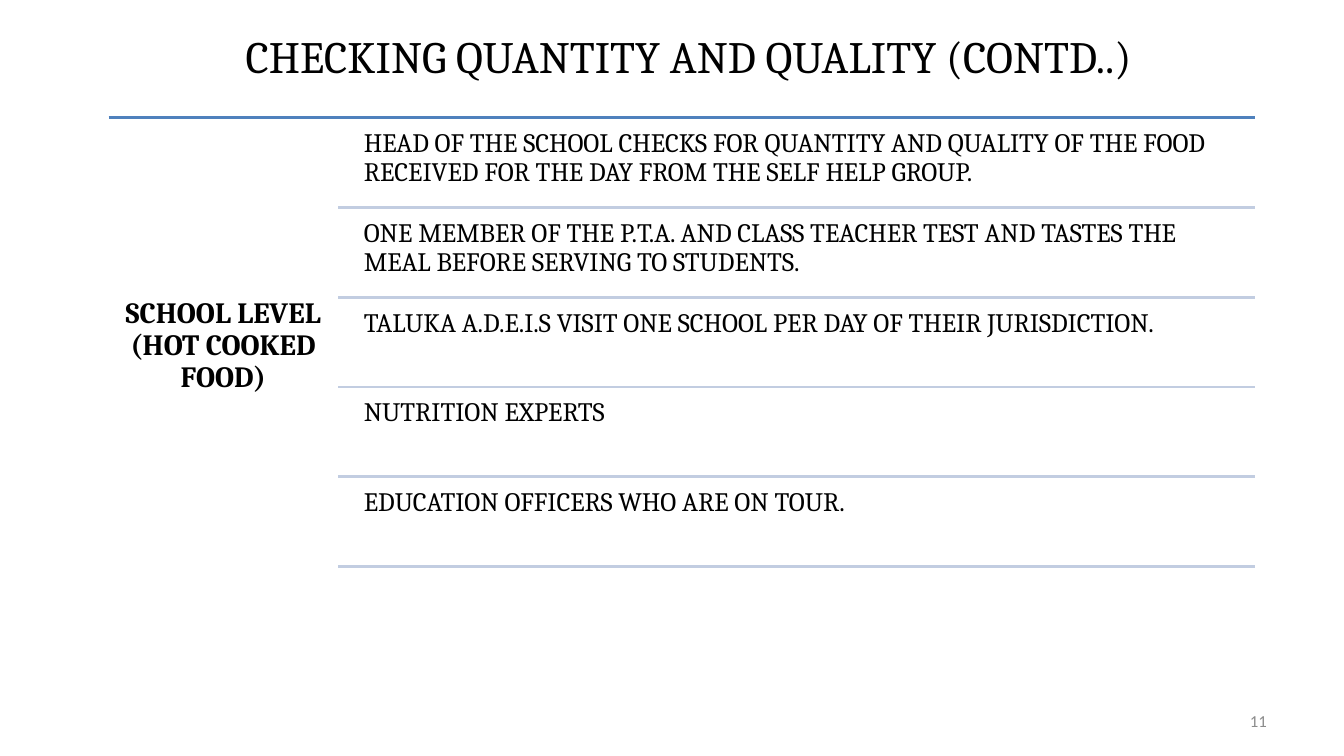
import pptx
import pptx.dml.color
import pptx.enum.shapes
import pptx.enum.text
import pptx.oxml.ns
import pptx.util
from lxml import etree
from pptx.util import Cm

ALIGN = pptx.enum.text.PP_ALIGN
MIDDLE = pptx.enum.text.MSO_ANCHOR.MIDDLE
CHECKS = [
    "HEAD OF THE SCHOOL CHECKS FOR QUANTITY AND QUALITY OF THE FOOD "
    "RECEIVED FOR THE DAY FROM THE SELF HELP GROUP.",
    "ONE MEMBER OF THE P.T.A. AND CLASS TEACHER TEST AND TASTES THE "
    "MEAL BEFORE SERVING TO STUDENTS.",
    "TALUKA A.D.E.I.S VISIT ONE SCHOOL PER DAY OF THEIR JURISDICTION.",
    "NUTRITION EXPERTS",
    "EDUCATION OFFICERS WHO ARE ON TOUR.",
]
LIST_TOP = 2.97
ROW_PITCH = 2.26
RIGHT = 31.62


def color(value):
    return pptx.dml.color.RGBColor.from_string(value)


def write(shape, text, size, align, font="Cambria", fill="000000", bold=False):
    para = shape.text_frame.paragraphs[0]
    para.text = text
    para.alignment = align
    para.font.size = pptx.util.Pt(size)
    para.font.name = font
    para.font.bold = bold
    para.font.color.rgb = color(fill)
    return para


def add_text(page, left, top, width, height, inset=0.2):
    box = page.shapes.add_textbox(Cm(left), Cm(top), Cm(width), Cm(height))
    frame = box.text_frame
    frame.word_wrap = True
    frame.margin_left = frame.margin_right = Cm(inset)
    frame.margin_top = frame.margin_bottom = Cm(inset)
    return box


def add_rule(page, left, top, line_color):
    rule = page.shapes.add_connector(
        pptx.enum.shapes.MSO_CONNECTOR.STRAIGHT,
        Cm(left), Cm(top), Cm(RIGHT), Cm(top))
    rule.line.color.rgb = color(line_color)
    rule.line.width = pptx.util.Pt(2)
    etree.SubElement(rule._element.spPr, pptx.oxml.ns.qn("a:effectLst"))


def add_title(page, text):
    title = page.shapes.title
    title.left, title.top = Cm(2.34), Cm(0.58)
    title.width, title.height = Cm(30.05), Cm(1.63)
    title.text_frame.vertical_anchor = MIDDLE
    write(title, text, 32, ALIGN.CENTER)


def add_level(page, text):
    box = add_text(page, 2.74, 7.29, 5.77, 3.05, 0.23)
    write(box, text, 21, ALIGN.CENTER, bold=True).line_spacing = 0.9


def add_check(page, row, text):
    top = LIST_TOP + row * ROW_PITCH
    box = add_text(page, 8.97, top + 0.1, 22.66, 2.16)
    write(box, text, 19, ALIGN.LEFT).line_spacing = 0.9
    add_rule(page, 8.53, top + ROW_PITCH, "C2CDE1")


def add_page_number(page, number):
    box = add_text(page, 24.28, 17.65, 7.9, 1.02, 0.25)
    box.text_frame.vertical_anchor = MIDDLE
    write(box, number, 12, ALIGN.RIGHT, "Calibri", "8C8C8C")


def main():
    deck = pptx.Presentation()
    deck.slide_width, deck.slide_height = Cm(33.87), Cm(19.05)
    page = deck.slides.add_slide(deck.slide_layouts.get_by_name("Title Only"))
    add_title(page, "CHECKING QUANTITY AND QUALITY (CONTD..)")
    add_rule(page, 2.74, LIST_TOP, "4F81BD")
    add_level(page, "SCHOOL LEVEL (HOT COOKED FOOD)")
    for row, text in enumerate(CHECKS):
        add_check(page, row, text)
    add_page_number(page, "11")
    deck.save("out.pptx")


if __name__ == "__main__":
    main()
